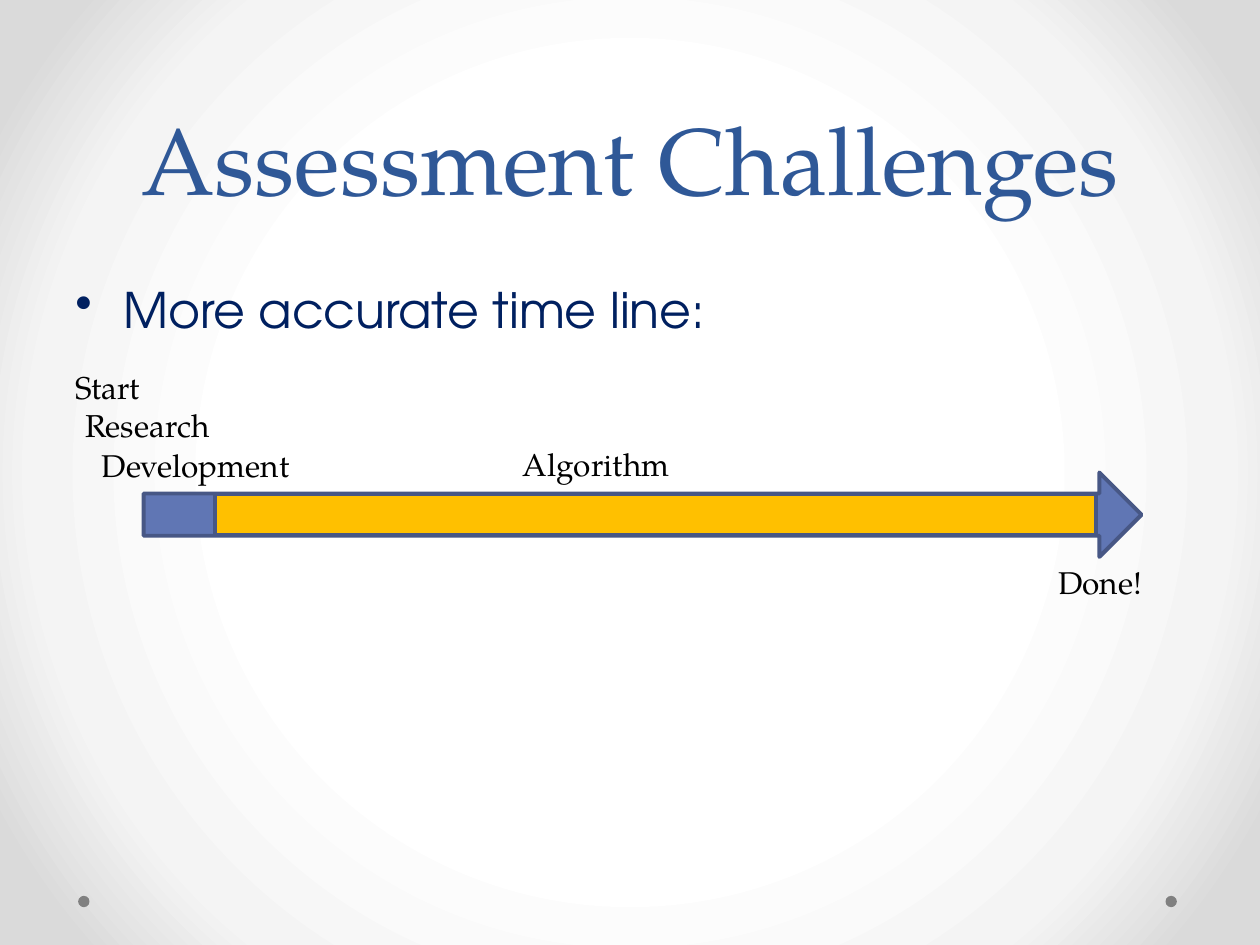
from lxml.etree import SubElement as Sub
from pptx import Presentation
from pptx.dml.color import RGBColor
from pptx.enum.shapes import MSO_SHAPE as Kind
from pptx.enum.text import MSO_ANCHOR as Anchor, PP_ALIGN as Align
from pptx.oxml.ns import qn
from pptx.util import Inches, Pt

SERIF = "TeX Gyre Pagella"
SANS = "TeX Gyre Adventor"


def color(code):
    """Return the colour for a hex string."""
    return RGBColor.from_string(code)


def place(*box):
    """Turn left, top, width and height into lengths."""
    return [Inches(n) for n in box]


def shade(slide, stops):
    """Fill the background with a circular gradient."""
    fill = slide.background.fill
    fill.gradient()
    grad = slide._element.find(".//" + qn("a:gradFill"))
    for node in list(grad):
        grad.remove(node)
    items = Sub(grad, qn("a:gsLst"))
    for pos, code in stops:
        stop = Sub(items, qn("a:gs"), pos=str(pos * 1000))
        Sub(stop, qn("a:srgbClr"), val=code)
    ring = Sub(grad, qn("a:path"), path="circle")
    Sub(ring, qn("a:fillToRect"), {side: "50000" for side in "ltrb"})


def shape(slide, kind, box, fill, line=None):
    """Add a filled shape with an optional outline."""
    item = slide.shapes.add_shape(kind, *place(*box))
    item.shadow.inherit = False
    item.fill.solid()
    item.fill.fore_color.rgb = color(fill)
    if line:
        item.line.color.rgb = color(line)
        item.line.width = Pt(2.25)
    else:
        item.line.fill.background()


def text(slide, words, box, size=18, face=SERIF, code="000000", anchor=Anchor.TOP, **form):
    """Add a one-paragraph text box and return the paragraph."""
    frame = slide.shapes.add_textbox(*place(*box)).text_frame
    frame.word_wrap = True
    frame.vertical_anchor = anchor
    para = frame.paragraphs[0]
    for key, val in form.items():
        setattr(para, key, val)
    run = para.add_run()
    run.text = words
    for key, val in {"size": Pt(size), "name": face}.items():
        setattr(run.font, key, val)
    run.font.color.rgb = color(code)
    return para


def bullet(para, indent):
    """Give a paragraph a hanging bullet."""
    props = para._p.get_or_add_pPr()
    props.set("marL", str(Inches(indent)))
    props.set("indent", str(-Inches(indent)))
    Sub(props, qn("a:buChar"), char="•")


def main():
    """Build the time line slide."""
    deck = Presentation()
    deck.slide_width, deck.slide_height = Inches(10), Inches(7.5)
    slide = deck.slides.add_slide(deck.slide_layouts[6])
    shade(slide, [(50, "FFFFFF"), (76, "F4F4F4"), (92, "DADADA")])
    for left in (9.25, 0.62):
        shape(slide, Kind.OVAL, (left, 7.11, 0.09, 0.09), "808080")
    text(slide, "Assessment Challenges", (0.5, 0, 9, 1.75), 54, code="2F5897",
         anchor=Anchor.BOTTOM, alignment=Align.CENTER, line_spacing=Pt(58))
    point = text(slide, "More accurate time line:", (0.5, 2.17, 9, 4.53), 28, SANS, "002060")
    bullet(point, 0.38)
    shape(slide, Kind.RIGHT_ARROW, (1.14, 3.75, 7.92, 0.67), "6076B4", "475785")
    labels = [
        ("Start", 0.5, 2.87, 0.75),
        ("Research", 0.58, 3.17, 1.33),
        ("Development", 0.71, 3.49, 2),
        ("Algorithm", 4.05, 3.48, 1.42),
        ("Done!", 8.3, 4.42, 0.96),
    ]
    for words, left, top, width in labels:
        text(slide, words, (left, top, width, 0.4))
    shape(slide, Kind.RECTANGLE, (1.71, 3.92, 6.99, 0.33), "FFC000", "475785")
    deck.save("out.pptx")


if __name__ == "__main__":
    main()
